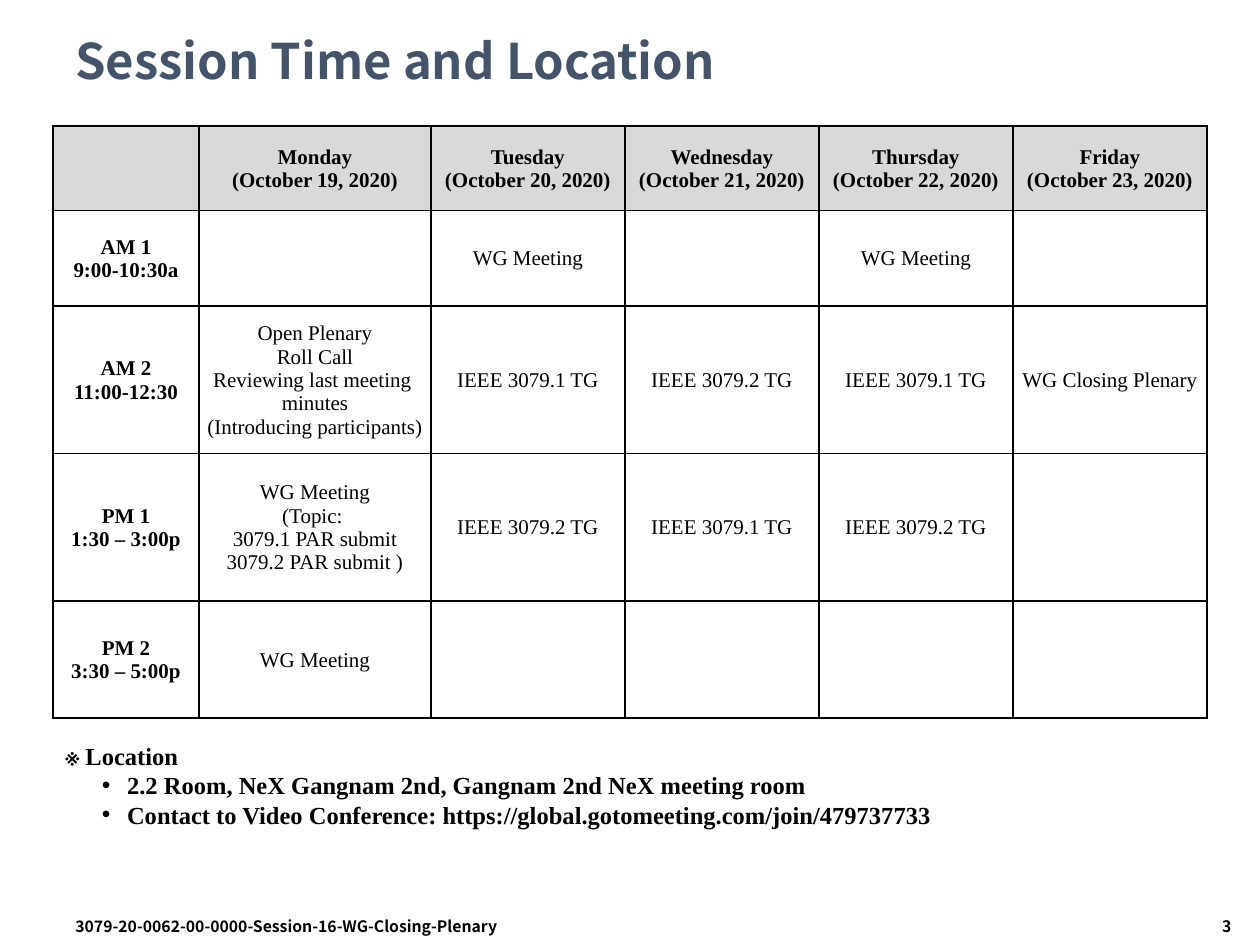
from copy import deepcopy

from lxml import etree
from pptx import Presentation
from pptx.dml.color import RGBColor
from pptx.enum.text import MSO_ANCHOR as Anchor, PP_ALIGN as Align
from pptx.oxml.ns import qn
from pptx.util import Inches, Pt

COLORS = {"title": "44546A", "text": "000000", "border": "000000", "header": "D9D9D9"}
SANS = "Noto Sans CJK KR"
SERIF = "Times New Roman"

COLUMN_WIDTHS = [1.16, 1.84] + [1.54] * 4
ROW_HEIGHTS = [0.67, 0.76, 1.17, 1.17, 0.93]
DAYS = ["Monday", "Tuesday", "Wednesday", "Thursday", "Friday"]
# A new line starts a paragraph; \v is a line break inside one.
SCHEDULE = [
    [""] + [f"{day}\n(October {date}, 2020)" for date, day in enumerate(DAYS, 19)],
    ["AM 1\n9:00-10:30a", "", "WG Meeting", "", "WG Meeting", ""],
    ["AM 2\n11:00-12:30",
     "Open Plenary\nRoll Call\nReviewing last meeting \vminutes\n(Introducing participants)",
     "IEEE 3079.1 TG", "IEEE 3079.2 TG", "IEEE 3079.1 TG", "WG Closing Plenary"],
    ["PM 1\n1:30 – 3:00p",
     "WG Meeting\n(Topic: \v3079.1 PAR submit\v3079.2 PAR submit )",
     "IEEE 3079.2 TG", "IEEE 3079.1 TG", "IEEE 3079.2 TG", ""],
    ["PM 2\n3:30 – 5:00p", "WG Meeting", "", "", "", ""],
]


def add_bullet(paragraph):
    properties = paragraph._p.get_or_add_pPr()
    properties.set("marL", str(Inches(0.49)))
    properties.set("indent", str(Inches(-0.2)))
    etree.SubElement(properties, qn("a:buFont")).set("typeface", "Arial")
    etree.SubElement(properties, qn("a:buChar")).set("char", "•")


def write_text(frame, text, *, size, font=SERIF, color="text", bold=True,
               align=Align.LEFT, spacing=None, bullets_from=None):
    """Fill a text frame; paragraphs from index bullets_from on get bullets."""
    for index, line in enumerate(text.split("\n")):
        paragraph = frame.paragraphs[0] if index == 0 else frame.add_paragraph()
        paragraph.text = line
        paragraph.alignment = align
        if spacing:
            paragraph.line_spacing = spacing
        if bullets_from is not None and index >= bullets_from:
            add_bullet(paragraph)
        for run in paragraph.runs:
            run.font.name = font
            run.font.size = Pt(size)
            run.font.bold = bold
            run.font.color.rgb = RGBColor.from_string(COLORS[color])
        for line_break in paragraph._p.findall(qn("a:br")):
            line_break.append(deepcopy(paragraph.runs[0]._r.rPr))


def add_text(slide, text, left, top, width, height, *, anchor=Anchor.TOP, **text_format):
    box = slide.shapes.add_textbox(Inches(left), Inches(top), Inches(width), Inches(height))
    frame = box.text_frame
    frame.word_wrap = True
    frame.vertical_anchor = anchor
    write_text(frame, text, **text_format)


def set_borders(cell):
    properties = cell._tc.get_or_add_tcPr()
    for side in ("lnL", "lnR", "lnT", "lnB"):
        line = etree.SubElement(properties, qn(f"a:{side}"), w=str(Pt(1)))
        fill = etree.SubElement(line, qn("a:solidFill"))
        etree.SubElement(fill, qn("a:srgbClr"), val=COLORS["border"])


def format_cell(cell, text, is_header, bold):
    cell.vertical_anchor = Anchor.MIDDLE
    cell.margin_left = cell.margin_right = cell.margin_top = Inches(0.01)
    cell.margin_bottom = 0
    set_borders(cell)
    if is_header:
        cell.fill.solid()
        cell.fill.fore_color.rgb = RGBColor.from_string(COLORS["header"])
    else:
        cell.fill.background()
    write_text(cell.text_frame, text, size=12, bold=bold, align=Align.CENTER)


def add_schedule(slide):
    table = slide.shapes.add_table(
        len(ROW_HEIGHTS), len(COLUMN_WIDTHS), Inches(0.42), Inches(1),
        Inches(sum(COLUMN_WIDTHS)), Inches(sum(ROW_HEIGHTS))).table
    table.first_row = table.horz_banding = False
    for column, width in zip(table.columns, COLUMN_WIDTHS):
        column.width = Inches(width)
    for row, height in zip(table.rows, ROW_HEIGHTS):
        row.height = Inches(height)
    for row_index, texts in enumerate(SCHEDULE):
        for column_index, text in enumerate(texts):
            format_cell(table.cell(row_index, column_index), text,
                        is_header=row_index == 0, bold=0 in (row_index, column_index))


def main():
    presentation = Presentation()
    presentation.slide_width = Inches(10)
    presentation.slide_height = Inches(7.5)
    slide = presentation.slides.add_slide(presentation.slide_layouts[6])

    add_text(slide, "Session Time and Location", 0.5, 0.17, 9, 0.67,
             anchor=Anchor.MIDDLE, size=28, font=SANS, color="title", spacing=0.9)
    add_text(slide, "3", 8.25, 7.23, 1.62, 0.27, size=9, font=SANS, align=Align.RIGHT)
    add_text(slide, "3079-20-0062-00-0000-Session-16-WG-Closing-Plenary",
             0.5, 7.23, 4.42, 0.27, size=9, font=SANS)
    add_text(slide, "※ Location\n"
             "2.2 Room, NeX Gangnam 2nd, Gangnam 2nd NeX meeting room\n"
             "Contact to Video Conference: https://global.gotomeeting.com/join/479737733",
             0.42, 5.83, 9.17, 0.81, size=14, bullets_from=1)
    add_schedule(slide)
    presentation.save("out.pptx")


if __name__ == "__main__":
    main()
